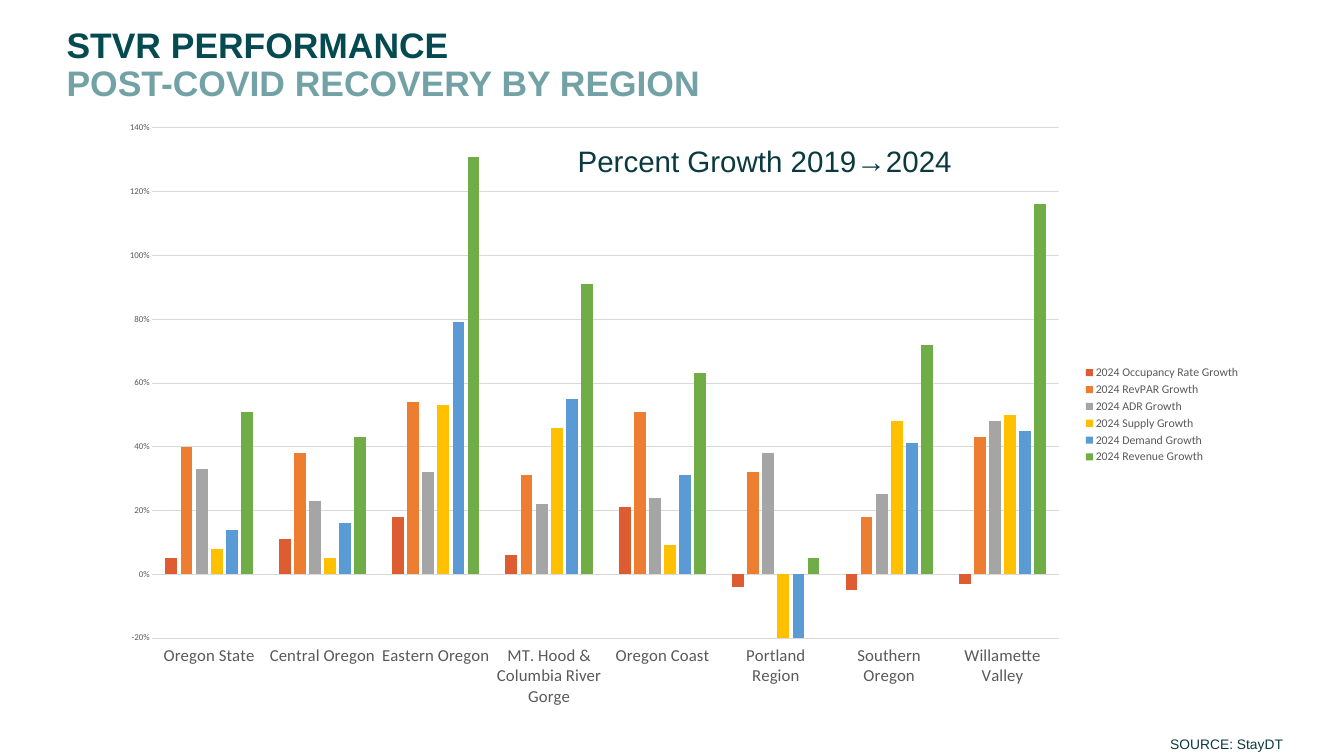
import pptx
import pptx.chart.data
import pptx.dml.color
import pptx.enum.chart
import pptx.enum.text
import pptx.util
from dataclasses import dataclass

Inches = pptx.util.Inches

# Content
TITLE_LINES = ["STVR PERFORMANCE", "POST-COVID RECOVERY BY REGION"]
CHART_HEADING = "Percent Growth 2019→2024"
SOURCE_NOTE = "SOURCE: StayDT"
REGIONS = [
    "Oregon State", "Central Oregon", "Eastern Oregon",
    "MT. Hood & Columbia River Gorge", "Oregon Coast",
    "Portland Region", "Southern Oregon", "Willamette Valley",
]
GROWTH = [  # measure, bar colour, one value per region
    ("Occupancy Rate", "DE5C32", [0.05, 0.11, 0.18, 0.06, 0.21, -0.04, -0.05, -0.03]),
    ("RevPAR", "ED7D31", [0.4, 0.38, 0.54, 0.31, 0.51, 0.32, 0.18, 0.43]),
    ("ADR", "A5A5A5", [0.33, 0.23, 0.32, 0.22, 0.24, 0.38, 0.25, 0.48]),
    ("Supply", "FFC000", [0.08, 0.05, 0.53, 0.46, 0.09, -0.2, 0.48, 0.5]),
    ("Demand", "5B9BD5", [0.14, 0.16, 0.79, 0.55, 0.31, -0.23, 0.41, 0.45]),
    ("Revenue", "70AD47", [0.51, 0.43, 1.31, 0.91, 0.63, 0.05, 0.72, 1.16]),
]


@dataclass(frozen=True)
class Theme:
    text_font: str = "Arial"
    chart_font: str = "Calibri"
    title_colors: tuple = ("044A50", "72A2A6")
    ink: str = "0A3A3F"
    label: str = "595959"
    grid: str = "D9D9D9"
    title_size: int = 36
    heading_size: int = 30
    source_size: int = 14
    region_size: int = 17
    legend_size: int = 12
    percent_size: int = 9


THEME = Theme()


def rgb(color):
    return pptx.dml.color.RGBColor.from_string(color)


def style_font(font, name, size, color, bold=False):
    font.name = name
    font.size = pptx.util.Pt(size)
    font.bold = bold
    font.color.rgb = rgb(color)


def style_line(line, color):
    line.color.rgb = rgb(color)
    line.width = pptx.util.Pt(0.75)


def place(shape, left, top, width, height):
    shape.left, shape.top = Inches(left), Inches(top)
    shape.width, shape.height = Inches(width), Inches(height)


def add_title(page):
    title = page.shapes.title
    place(title, 0.8, 0.3, 9.31, 1.26)
    frame = title.text_frame
    frame.word_wrap = True
    frame.auto_size = pptx.enum.text.MSO_AUTO_SIZE.NONE
    frame.vertical_anchor = pptx.enum.text.MSO_ANCHOR.MIDDLE
    frame.margin_left = frame.margin_right = Inches(0.14)
    frame.margin_top = frame.margin_bottom = Inches(0.07)
    for index, (line, color) in enumerate(zip(TITLE_LINES, THEME.title_colors)):
        para = frame.add_paragraph() if index else frame.paragraphs[0]
        para.alignment = pptx.enum.text.PP_ALIGN.LEFT
        para.line_spacing = 0.9
        para.space_before = pptx.util.Pt(0)
        span = para.add_run()
        span.text = line
        style_font(span.font, THEME.text_font, THEME.title_size, color, bold=True)


def add_label(page, text, size, left, top, width, height):
    box = page.shapes.add_textbox(
        Inches(left), Inches(top), Inches(width), Inches(height))
    box.text_frame.word_wrap = True
    span = box.text_frame.paragraphs[0].add_run()
    span.text = text
    style_font(span.font, THEME.text_font, size, THEME.ink)


def add_growth_chart(page):
    data = pptx.chart.data.CategoryChartData(number_format="0%")
    data.categories = REGIONS
    for measure, _, values in GROWTH:
        data.add_series(f"2024 {measure} Growth", values)
    chart = page.shapes.add_chart(
        pptx.enum.chart.XL_CHART_TYPE.COLUMN_CLUSTERED,
        Inches(1.51), Inches(1.56), Inches(16.1), Inches(8.59), data).chart
    chart.has_title = False
    style_font(chart.font, THEME.chart_font, 10, "000000")

    # Bars
    plot = chart.plots[0]
    plot.vary_by_categories = False
    plot.gap_width = 219
    plot.overlap = -27
    for series, (_, color, _) in zip(plot.series, GROWTH):
        series.invert_if_negative = False
        series.format.fill.solid()
        series.format.fill.fore_color.rgb = rgb(color)

    # Axes
    regions, percents = chart.category_axis, chart.value_axis
    for axis, size in ((regions, THEME.region_size), (percents, THEME.percent_size)):
        axis.major_tick_mark = pptx.enum.chart.XL_TICK_MARK.NONE
        axis.minor_tick_mark = pptx.enum.chart.XL_TICK_MARK.NONE
        style_font(axis.tick_labels.font, THEME.chart_font, size, THEME.label)
    regions.tick_label_position = pptx.enum.chart.XL_TICK_LABEL_POSITION.LOW
    style_line(regions.format.line, THEME.grid)
    percents.minimum_scale, percents.maximum_scale = -0.2, 1.4
    percents.major_unit = 0.2
    percents.tick_labels.number_format = "0%"
    percents.tick_labels.number_format_is_linked = False
    percents.format.line.fill.background()
    percents.has_major_gridlines = True
    style_line(percents.major_gridlines.format.line, THEME.grid)

    # Legend
    chart.has_legend = True
    chart.legend.position = pptx.enum.chart.XL_LEGEND_POSITION.RIGHT
    chart.legend.include_in_layout = False
    style_font(chart.legend.font, THEME.chart_font, THEME.legend_size, THEME.label)


def main():
    deck = pptx.Presentation()
    deck.slide_width, deck.slide_height = Inches(18.96), Inches(10.67)
    page = deck.slides.add_slide(deck.slide_layouts[5])
    add_title(page)
    add_growth_chart(page)
    add_label(page, CHART_HEADING, THEME.heading_size, 8.05, 1.97, 6.53, 0.61)
    add_label(page, SOURCE_NOTE, THEME.source_size, 16.41, 10.33, 2.55, 0.34)
    deck.save("out.pptx")


if __name__ == "__main__":
    main()
